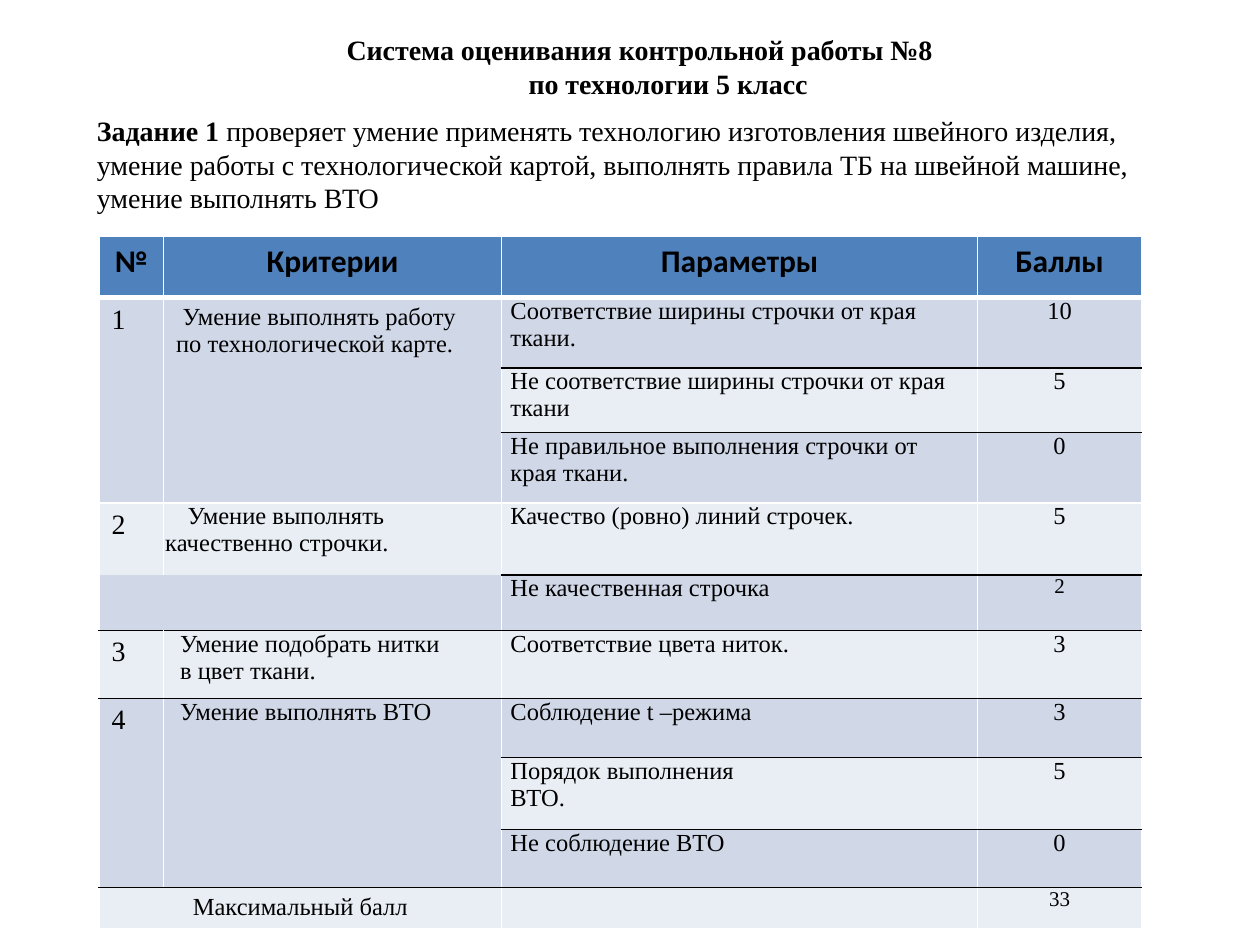
"""Build the grading slide for a technology test: heading, task text and score table."""
from lxml import etree
from pptx import Presentation
from pptx.dml.color import RGBColor
from pptx.enum import text
from pptx.oxml import ns
from pptx.util import Cm, Pt

BLACK = RGBColor(0x00, 0x00, 0x00)
WHITE = RGBColor(0xFF, 0xFF, 0xFF)
HEADER_BLUE = RGBColor(0x4F, 0x81, 0xBD)
BAND_DARK = RGBColor(0xD0, 0xD8, 0xE8)
BAND_LIGHT = RGBColor(0xE9, 0xED, 0xF4)
SERIF = "Times New Roman"
LEFT, CENTER = text.PP_ALIGN.LEFT, text.PP_ALIGN.CENTER

NUMBER = {"size": Pt(16), "name": SERIF, "bold": False}
PLAIN = {"size": Pt(14), "name": SERIF, "bold": False}
SMALL = {"size": Pt(12), "name": SERIF, "bold": False}
STRONG = {"size": Pt(16), "name": SERIF, "bold": True}
HEADING = {"size": Pt(18), "name": "Calibri", "bold": True}

NORMAL_INSET = (0.25, 0.13, 0.25, 0.13)
NARROW_INSET = (0.18, 0, 0.18, 0)
TIGHT_INSET = (0.03, 0, 0.03, 0)

COLUMNS = (1.3, 6.81, 9.6, 3.3)
ROWS = (1.24, 1.42, 1.3, 1.42, 1.45, 1.12, 1.37, 1.19, 1.45, 1.17, 0.84)
HEADERS = ("№", "Критерии", "Параметры", "Баллы")
SCORES = (
    ("Соответствие ширины строчки от края ткани.", "10"),
    ("Не соответствие ширины строчки от края ткани", "5"),
    ("Не правильное выполнения строчки от края ткани.", "0"),
    ("Качество (ровно) линий строчек.", "5"),
    ("Не качественная строчка", "2"),
    ("Соответствие цвета ниток.", "3"),
    ("Соблюдение t –режима", "3"),
    ("Порядок выполнения\nВТО.", "5"),
    ("Не соблюдение ВТО", "0"),
    ("", "33"),
)
# row: (number, lines, left indents, first-line indent, inset)
CRITERIA = {
    1: ("1", "Умение выполнять работу по технологической карте.", (0,), 0.13,
        (0.25, 0.13, 0.6, 0.13)),
    4: ("2", "Умение выполнять\nкачественно строчки.", (0.45, 0), 0, TIGHT_INSET),
    6: ("3", "Умение подобрать нитки\nв цвет ткани.", (0.3, 0.3), 0, TIGHT_INSET),
    7: ("4", "Умение выполнять ВТО", (0.3,), 0, TIGHT_INSET),
}
MERGES = ((1, 0, 3, 0), (1, 1, 3, 1), (5, 0, 5, 1), (7, 0, 9, 0), (7, 1, 9, 1), (10, 0, 10, 1))
LEFT_LINES = (WHITE, WHITE, WHITE, WHITE, None, BLACK, BLACK, BLACK, BLACK, BLACK, WHITE)
WHITE_ROWS = (0, 3, 10)


def apply(target, values):
    """Set every attribute in a dict of format values."""
    for name, value in values.items():
        setattr(target, name, value)


def add_span(para, words, style):
    """Append a formatted run of black text."""
    span = para.add_run()
    span.text = words
    apply(span.font, style)
    span.font.color.rgb = BLACK


def set_indent(para, left, first=0):
    """Give a paragraph its left and first-line indents in centimetres."""
    properties = para._p.get_or_add_pPr()
    properties.set("marL", str(int(Cm(left))))
    properties.set("indent", str(int(Cm(first))))


def place(box, left, top, width, height):
    """Move a placeholder and return its prepared text frame."""
    apply(box, {"left": Cm(left), "top": Cm(top), "width": Cm(width), "height": Cm(height)})
    frame = box.text_frame
    apply(frame, {"word_wrap": True, "auto_size": text.MSO_AUTO_SIZE.NONE,
                  "vertical_anchor": text.MSO_ANCHOR.TOP})
    return frame


def add_title(page):
    """Write the two-line heading."""
    frame = place(page.shapes.title, 4.5, 0.53, 16.79, 1.63)
    first, second = frame.paragraphs[0], frame.add_paragraph()
    first.alignment, second.alignment = CENTER, LEFT
    add_span(first, "Система оценивания контрольной работы №8", STRONG)
    add_span(second, "по технологии 5 класс", STRONG)
    set_indent(second, 5.9)


def add_task(page):
    """Write the description of the task."""
    para = place(page.placeholders[1], 1.7, 2.16, 21.59, 2.31).paragraphs[0]
    para.space_before = Pt(0)
    set_indent(para, 0)
    etree.SubElement(para._p.get_or_add_pPr(), ns.qn("a:buNone"))
    add_span(para, "Задание 1 ", STRONG)
    add_span(para, "проверяет умение применять технологию изготовления швейного изделия, "
             "умение работы с технологической картой, выполнять правила ТБ на швейной "
             "машине, умение выполнять ВТО", NUMBER)


def set_border(cell, side, color, width=1):
    """Draw one side of a cell, or hide it when there is no colour."""
    line = etree.SubElement(cell._tc.get_or_add_tcPr(), ns.qn("a:ln" + side), w=str(Pt(width)))
    if color is None:
        etree.SubElement(line, ns.qn("a:noFill"))
    else:
        fill = etree.SubElement(line, ns.qn("a:solidFill"))
        etree.SubElement(fill, ns.qn("a:srgbClr"), val=str(color))


def line_below(row, column):
    """Return colour and width of the line under a cell."""
    if row <= 0:
        return WHITE, 3 if row == 0 else 1
    if column < 2:
        return LEFT_LINES[row], 1
    return (WHITE if row in WHITE_ROWS else BLACK), 1


def style_cell(cell, row, column):
    """Give a cell its borders and banded fill."""
    set_border(cell, "L", WHITE)
    set_border(cell, "R", WHITE)
    set_border(cell, "T", *line_below(row - 1, column))
    set_border(cell, "B", *line_below(row, column))
    cell.fill.solid()
    band = BAND_DARK if row % 2 else BAND_LIGHT
    cell.fill.fore_color.rgb = band if row else HEADER_BLUE


def write_cell(cell, words, style, align=LEFT, inset=NORMAL_INSET):
    """Write the lines of a cell and return its paragraphs."""
    sides = ("margin_left", "margin_top", "margin_right", "margin_bottom")
    apply(cell, {side: Cm(value) for side, value in zip(sides, inset)})
    frame = cell.text_frame
    for index, line in enumerate(words.split("\n")):
        para = frame.add_paragraph() if index else frame.paragraphs[0]
        para.alignment = align
        if line:
            add_span(para, line, style)
    return frame.paragraphs


def add_score_table(page):
    """Build the table of criteria, parameters and points."""
    table = page.shapes.add_table(len(ROWS), len(COLUMNS), Cm(2), Cm(4.76),
                                  Cm(sum(COLUMNS)), Cm(sum(ROWS))).table
    for column, width in zip(table.columns, COLUMNS):
        column.width = Cm(width)
    for row, height in zip(table.rows, ROWS):
        row.height = Cm(height)
    for row in range(len(ROWS)):
        for column in range(len(COLUMNS)):
            style_cell(table.cell(row, column), row, column)
    for top, left, bottom, right in MERGES:
        table.cell(top, left).merge(table.cell(bottom, right))
    for column, words in enumerate(HEADERS):
        write_cell(table.cell(0, column), words, HEADING, CENTER)
    for row, (parameter, points) in enumerate(SCORES, 1):
        write_cell(table.cell(row, 2), parameter, PLAIN, inset=NARROW_INSET)
        style = SMALL if row in (5, 10) else PLAIN
        write_cell(table.cell(row, 3), points, style, CENTER, NARROW_INSET)
    for row, (number, words, indents, first, inset) in CRITERIA.items():
        write_cell(table.cell(row, 0), number, NUMBER)
        paras = write_cell(table.cell(row, 1), words, PLAIN, inset=inset)
        for para, indent in zip(paras, indents):
            set_indent(para, indent, first)
    write_cell(table.cell(10, 0), "Максимальный балл", PLAIN, CENTER)


def main():
    """Create the deck and save it."""
    deck = Presentation()
    deck.slide_width, deck.slide_height = Cm(25.4), Cm(19.05)
    page = deck.slides.add_slide(deck.slide_layouts[1])
    add_title(page)
    add_task(page)
    add_score_table(page)
    deck.save("out.pptx")


if __name__ == "__main__":
    main()
